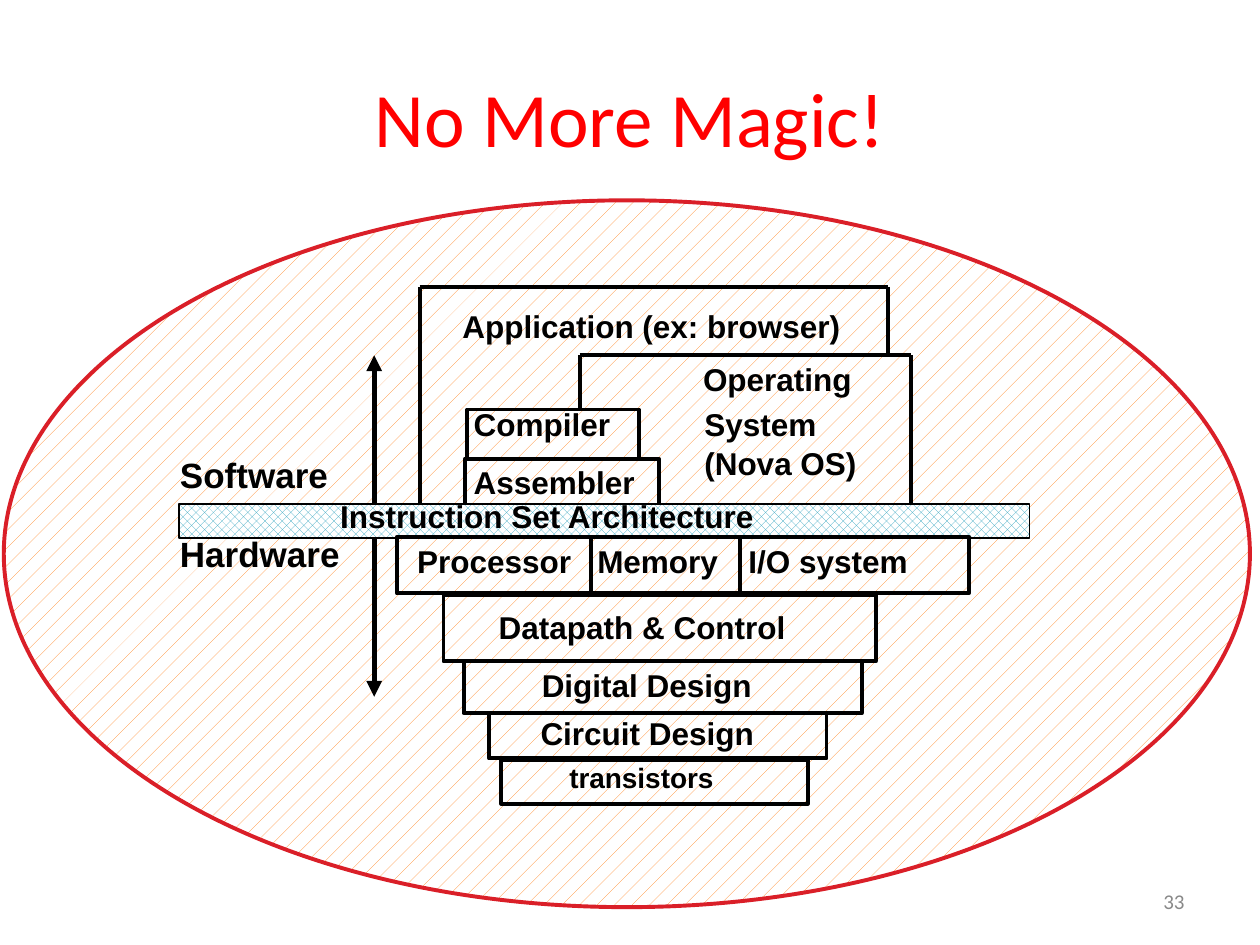
from lxml.etree import SubElement
from pptx import Presentation
from pptx.dml.color import RGBColor
from pptx.enum.dml import MSO_PATTERN as Pattern
from pptx.enum.shapes import MSO_CONNECTOR as Connector, MSO_SHAPE as Shape
from pptx.enum.text import MSO_ANCHOR as Anchor, PP_ALIGN as Align
from pptx.oxml.ns import qn
from pptx.util import Inches, Pt

WIDTH, HEIGHT = Inches(10), Inches(7.5)
COLUMNS, ROWS = 100, 75
COLORS = {
    "title": "FF0000", "number": "898989", "ink": "000000", "paper": "FFFFFF",
    "rim": "DA1F28", "hatch": "FF8119", "interface": "2DA2BF",
}
TIGHT = {"inset": (0.7, 0.3), "spacing": 1.02}


def color(name):
    """Return the named colour."""
    return RGBColor.from_string(COLORS[name])


def across(columns):
    """Turn grid columns into a length."""
    return round(WIDTH * columns / COLUMNS)


def down(rows):
    """Turn grid rows into a length."""
    return round(HEIGHT * rows / ROWS)


def place(left, top, width, height):
    """Turn a grid area into slide lengths."""
    return across(left), down(top), across(width), down(height)


def add_text(page, text, area, size=18, font="Arial", ink="ink", bold=True,
             align=Align.LEFT, anchor=Anchor.TOP, inset=(1, 0.5), spacing=None):
    """Add a text box with one paragraph per line of text."""
    frame = page.shapes.add_textbox(*place(*area)).text_frame
    frame.word_wrap = True
    frame.vertical_anchor = anchor
    frame.margin_left = frame.margin_right = across(inset[0])
    frame.margin_top = frame.margin_bottom = down(inset[1])
    for index, line in enumerate(text.split("\n")):
        para = frame.add_paragraph() if index else frame.paragraphs[0]
        para.alignment = align
        para.line_spacing = spacing
        span = para.add_run()
        span.text = line
        span.font.name = font
        span.font.size = Pt(size)
        span.font.bold = bold
        span.font.color.rgb = color(ink)


def add_box(page, area, kind=Shape.RECTANGLE, pattern=None, tint="ink",
            line="ink", weight=2.25):
    """Add an outlined shape, hollow or filled with a pattern."""
    box = page.shapes.add_shape(kind, *place(*area))
    box.shadow.inherit = False
    box.line.color.rgb = color(line)
    box.line.width = Pt(weight)
    if pattern is None:
        box.fill.background()
    else:
        box.fill.patterned()
        box.fill.pattern = pattern
        box.fill.fore_color.rgb = color(tint)
        box.fill.back_color.rgb = color("paper")


def add_line(page, start, end, weight=2.25, arrow=False):
    """Add a straight line between two grid points."""
    line = page.shapes.add_connector(
        Connector.STRAIGHT, across(start[0]), down(start[1]), across(end[0]), down(end[1]))
    line.line.color.rgb = color("ink")
    line.line.width = Pt(weight)
    if arrow:
        SubElement(line.line._get_or_add_ln(), qn("a:tailEnd"), type="triangle")
    SubElement(line._element.spPr, qn("a:effectLst"))


def add_path(page, *points):
    """Join successive grid points with lines."""
    for start, end in zip(points, points[1:]):
        add_line(page, start, end)


def add_software(page):
    """Draw the layers above the instruction set."""
    add_path(page, (33.3, 40), (33.3, 22.8), (70.5, 22.8), (70.5, 28.2))
    add_path(page, (46, 32.5), (46, 28.2), (72.3, 28.2), (72.3, 40.7))
    add_box(page, (37.1, 32.5, 13.6, 3.9))
    add_box(page, (36.9, 36.4, 15.4, 3.9))
    for text, area in (
        ("Application (ex: browser)", (36, 24, 34.2, 3.6)),
        ("Operating", (55.1, 28.2, 14.4, 3.6)),
        ("System\n(Nova OS)", (55.2, 31.8, 15.1, 6.7)),
        ("Compiler", (36.9, 31.8, 13.3, 3.6)),
        ("Assembler", (36.9, 36.4, 16.3, 3.6)),
    ):
        add_text(page, text, area, **TIGHT)


def add_interface(page):
    """Draw the bar between software and hardware."""
    add_box(page, (14.2, 40, 67.5, 2.7), pattern=Pattern.PERCENT_50,
            tint="interface", weight=1)
    add_text(page, "Instruction Set Architecture", (26.3, 39.6, 43.7, 3.2),
             inset=TIGHT["inset"], spacing=0.85)
    for text, top, start, end in (("Software", 35.5, 40, 28.2), ("Hardware", 41.8, 42.7, 55.3)):
        add_text(page, text, (13.3, top, 16, 4.4), size=20)
        add_line(page, (29.7, start), (29.7, end), weight=3, arrow=True)


def add_hardware(page):
    """Draw the layers below the instruction set."""
    for area in ((31.5, 42.6, 45.4, 4.5), (35.2, 47.2, 34.3, 5.3), (36.8, 52.5, 31.6, 4.1),
                 (38.8, 56.6, 26.8, 3.6), (39.8, 60.3, 24.3, 3.5)):
        add_box(page, area)
    for column in (46.9, 58.7):
        add_line(page, (column, 42.7), (column, 47.1))
    for text, left, top, width in (
        ("Processor", 32.4, 42.7, 14.8), ("Memory", 46.7, 42.7, 11.9),
        ("I/O system", 58.7, 42.7, 15.3), ("Digital Design", 42.3, 52.5, 19.7),
        ("Circuit Design", 42.2, 56.3, 20),
    ):
        add_text(page, text, (left, top, width, 3.6), **TIGHT)
    add_text(page, "Datapath & Control", (38.6, 47.8, 27.7, 4))
    add_text(page, "transistors", (44.2, 59.9, 15.4, 3.7), size=16)


def main():
    """Build and save the slide."""
    deck = Presentation()
    deck.slide_width, deck.slide_height = WIDTH, HEIGHT
    page = deck.slides.add_slide(deck.slide_layouts[6])
    add_text(page, "No More Magic!", (5, 3, 90, 12.5), size=44, font="Calibri",
             ink="title", bold=False, align=Align.CENTER, anchor=Anchor.MIDDLE)
    add_text(page, "33", (71.7, 69.5, 23.3, 4), size=12, font="Calibri",
             ink="number", bold=False, align=Align.RIGHT, anchor=Anchor.MIDDLE)
    add_box(page, (0.3, 15.9, 98.9, 56.1), Shape.OVAL, Pattern.PERCENT_5,
            tint="hatch", line="rim")
    add_software(page)
    add_interface(page)
    add_hardware(page)
    deck.save("out.pptx")


if __name__ == "__main__":
    main()
